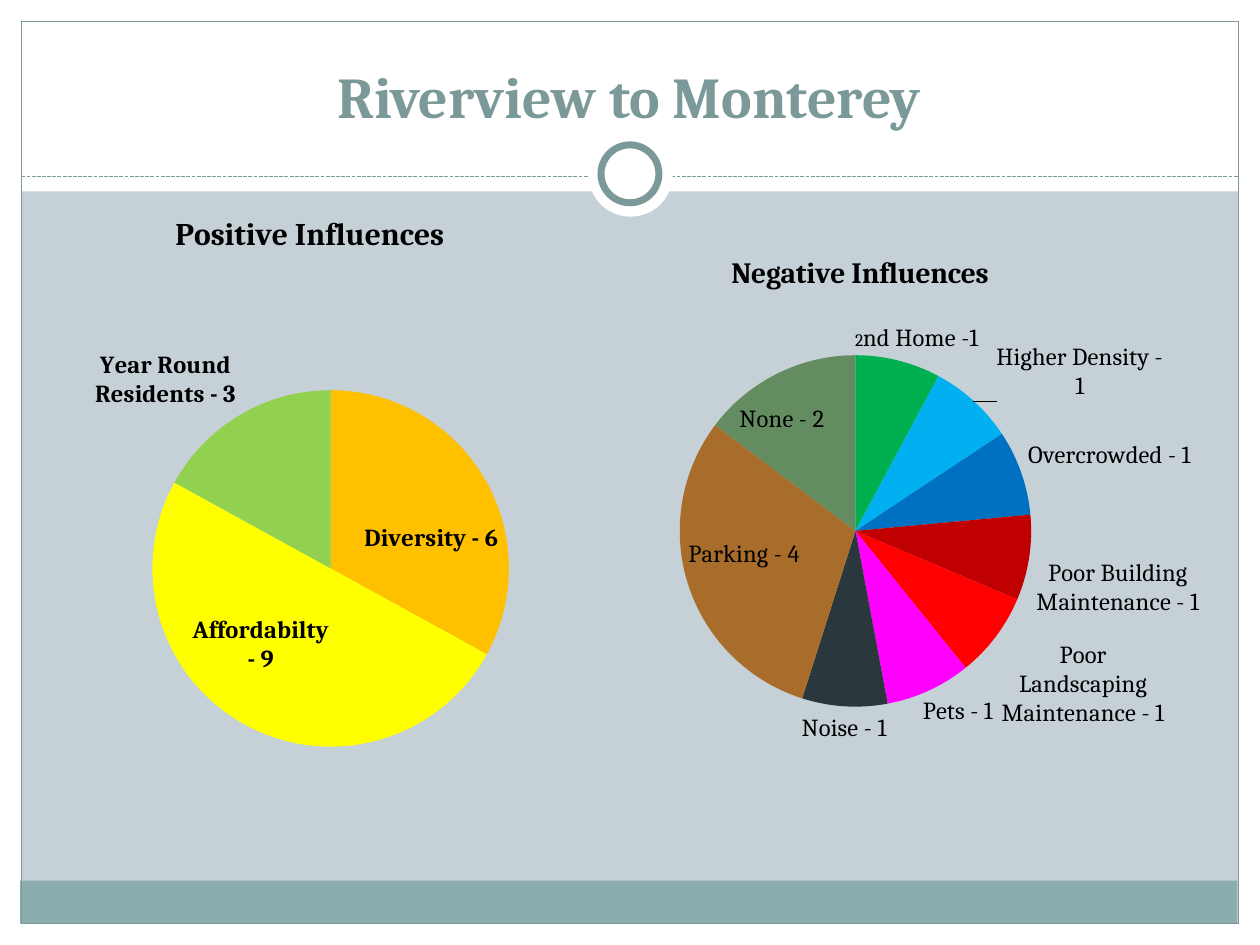
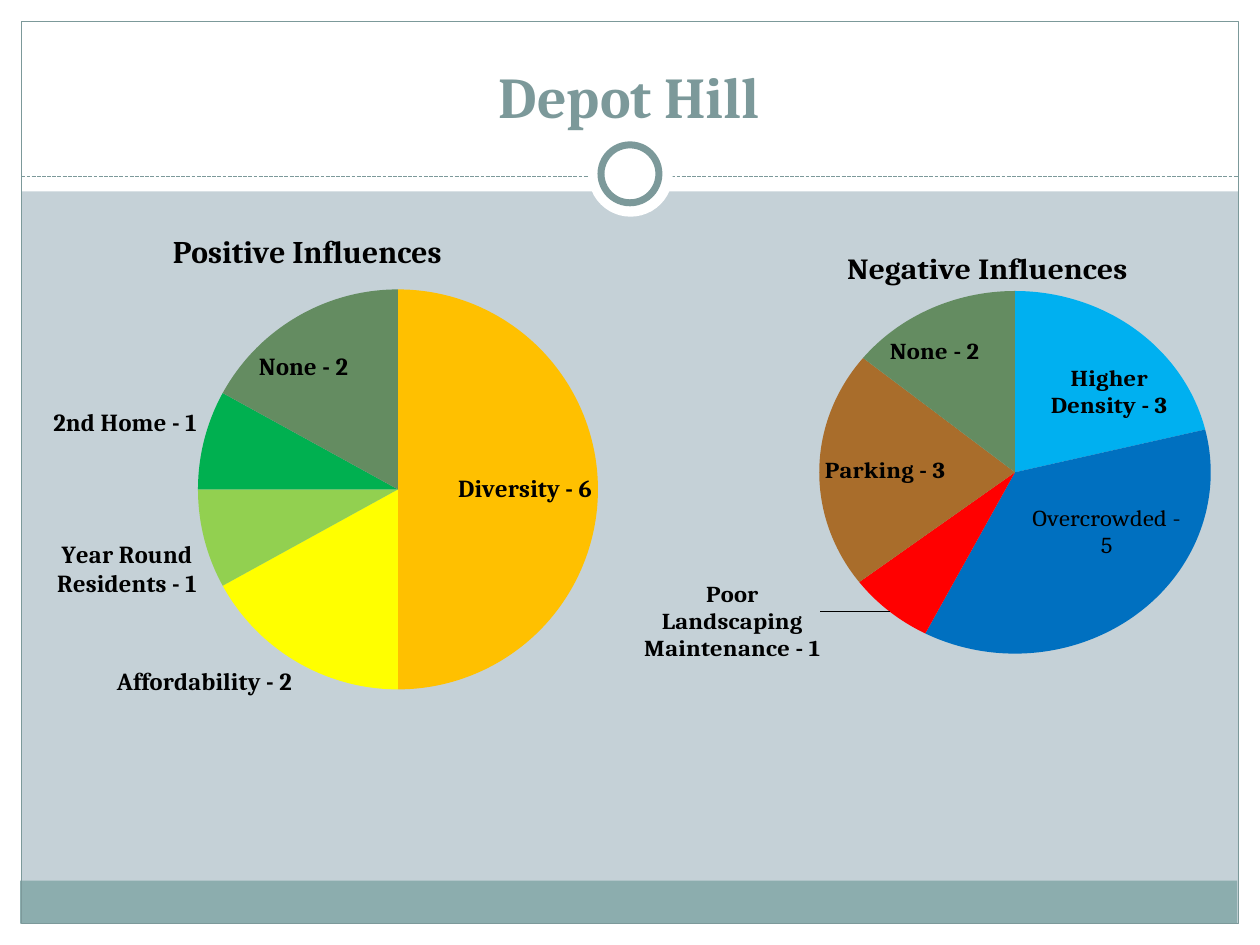
from lxml import etree
from pptx import Presentation
from pptx.chart.data import CategoryChartData
from pptx.dml.color import RGBColor
from pptx.enum import chart as ch, dml, shapes, text
from pptx.oxml import parse_xml
from pptx.oxml.ns import nsdecls, qn
from pptx.util import Inches, Pt

FONT = "Cambria"
BACK, WHITE, BLACK, ACCENT, FOOT = "C5D1D7", "FFFFFF", "000000", "7C999A", "8CADAE"
DIVERSE, AFFORD, RESIDENT, HOME, NONE = "FFC000", "FFFF00", "92D050", "00B050", "648C61"
DENSITY, CROWD, BUILDING, LANDSCAPE = "00B0F0", "0070C0", "C00000", "FF0000"
PETS, NOISE, PARKING = "FF00FF", "2A373D", "A96D2B"

# Content: each slice is (label, value, colour).
# "plot" and "title_at" are fractions of the chart; "moved" shifts one label;
# "custom" gives one label as runs of (text, size)
SLIDES = [
    ("Riverview to Monterey", [
        dict(title="Positive Influences", title_size=18, at=(-0.83, 1.5, 6.58, 4.67),
             plot=(0.31, 0.29, 0.43, 0.71), bold=True,
             slices=[("Diversity - 6", 33, DIVERSE),
                     ("Affordabilty - 9", 50, AFFORD),
                     ("Year Round Residents - 3", 17, RESIDENT)]),
        dict(title="Negative Influences", title_size=16.8, at=(3.33, 1.83, 6.99, 4.5),
             plot=(0.295, 0.22, 0.4, 0.62), bold=False,
             custom=(0, [("2", 10), ("nd Home -1", 14)]), moved=(1, 0.02, 0.01),
             slices=[("2nd Home 1", 8, HOME),
                     ("Higher Density - 1", 8, DENSITY),
                     ("Overcrowded - 1", 8, CROWD),
                     ("Poor Building Maintenance - 1", 8, BUILDING),
                     ("Poor Landscaping Maintenance - 1", 8, LANDSCAPE),
                     ("Pets - 1", 8, PETS),
                     ("Noise - 1", 8, NOISE),
                     ("Parking - 4", 31, PARKING),
                     ("None - 2", 15, NONE)]),
    ]),
    ("Depot Hill", [
        dict(title="Positive Influences", title_size=18, at=(-1.17, 1.67, 7.8, 3.92),
             plot=(0.35, 0.16, 0.41, 0.81), title_at=(0.32, 0.03), bold=True,
             slices=[("Diversity - 6", 50, DIVERSE),
                     ("Affordability - 2", 17, AFFORD),
                     ("Year Round Residents - 1", 8, RESIDENT),
                     ("2nd Home - 1", 8, HOME),
                     ("None - 2", 17, NONE)]),
        dict(title="Negative Influences", title_size=18, at=(4.25, 1.83, 7.25, 3.7),
             plot=(0.31, 0.14, 0.43, 0.84), title_at=(0.335, 0.03), bold=True,
             custom=(1, [("Overcrowded - 5", 14)]), moved=(2, -0.07, -0.05),
             slices=[("Higher Density - 3", 21, DENSITY),
                     ("Overcrowded - 5", 36, CROWD),
                     ("Poor Landscaping Maintenance - 1", 7, LANDSCAPE),
                     ("Parking - 3", 21, PARKING),
                     ("None - 2", 14, NONE)]),
    ]),
]

# Frame parts: preset, place, fill, line width
RECT, OVAL = shapes.MSO_SHAPE.RECTANGLE, shapes.MSO_SHAPE.OVAL
BANDS = [
    (RECT, (0, 7.33, 10, 0.17), WHITE, 0),
    (RECT, (0, 0, 10, 1.52), WHITE, 0),
    (RECT, (0, 0, 0.17, 7.5), WHITE, 0),
    (RECT, (9.83, 0, 0.17, 7.5), WHITE, 0),
    (RECT, (0.16, 6.99, 9.66, 0.34), FOOT, 0),
    (RECT, (0.17, 0.17, 9.66, 7.16), None, 0.75),
]
RING = [
    (OVAL, (4.67, 1.05, 0.67, 0.67), WHITE, 0),
    (OVAL, (4.77, 1.15, 0.46, 0.46), WHITE, 4),
]


def rgb(value):
    return RGBColor.from_string(value)


def set_font(font, size, bold, colour=BLACK):
    font.name, font.size, font.bold = FONT, Pt(size), bold
    font.color.rgb = rgb(colour)


def add_part(s, preset, at, fill, line):
    sp = s.shapes.add_shape(preset, *map(Inches, at))
    sp.shadow.inherit = False
    if fill:
        sp.fill.solid()
        sp.fill.fore_color.rgb = rgb(fill)
    else:
        sp.fill.background()
    if line:
        sp.line.color.rgb = rgb(ACCENT)
        sp.line.width = Pt(line)
    else:
        sp.line.fill.background()


def add_frame(s, title):
    """Background, bands, dashed rule, ring and title."""
    s.background.fill.solid()
    s.background.fill.fore_color.rgb = rgb(BACK)
    for part in BANDS:
        add_part(s, *part)
    rule = s.shapes.add_connector(shapes.MSO_CONNECTOR.STRAIGHT, Inches(0.17),
                                  Inches(1.4), Inches(9.83), Inches(1.4))
    rule.line.color.rgb = rgb(ACCENT)
    rule.line.width = Pt(0.75)
    rule.line.dash_style = dml.MSO_LINE.SQUARE_DOT
    etree.SubElement(rule._element.spPr, qn("a:effectLst"))
    for part in RING:
        add_part(s, *part)

    tf = s.shapes.add_textbox(*map(Inches, (0.33, 0.25, 9.33, 0.83))).text_frame
    tf.word_wrap = True
    tf.vertical_anchor = text.MSO_ANCHOR.BOTTOM
    p = tf.paragraphs[0]
    p.text = title
    p.alignment = text.PP_ALIGN.CENTER
    set_font(p.runs[0].font, 33, True, ACCENT)


def set_layout(parent, index, place, mode=None, inner=False):
    """Place a chart part by fractions of the chart."""
    for old in parent.findall(qn("c:layout")):
        parent.remove(old)
    parts = '<c:layoutTarget val="inner"/>' if inner else ""
    if mode:
        parts += f'<c:xMode val="{mode}"/><c:yMode val="{mode}"/>'
    parts += "".join(f'<c:{k} val="{v}"/>' for k, v in zip("xywh", place))
    parent.insert(index, parse_xml(
        f'<c:layout {nsdecls("c")}><c:manualLayout>{parts}</c:manualLayout></c:layout>'))


def add_pie(s, pie):
    names, values, colours = zip(*pie["slices"])
    data = CategoryChartData()
    data.categories = names
    data.add_series("Series 1", values)
    chart = s.shapes.add_chart(ch.XL_CHART_TYPE.PIE, *map(Inches, pie["at"]), data).chart
    chart.has_legend = False
    set_font(chart.font, 14, pie["bold"])

    # Title and plot area
    chart.has_title = True
    tf = chart.chart_title.text_frame
    tf.text = pie["title"]
    set_font(tf.paragraphs[0].runs[0].font, pie["title_size"], True)
    chart.chart_title.include_in_layout = False
    if "title_at" in pie:
        set_layout(chart.chart_title._element, 1, pie["title_at"], "edge")
    plot_area = chart._chartSpace.find(".//" + qn("c:plotArea"))
    set_layout(plot_area, 0, pie["plot"], "edge", inner=True)

    # Slices and labels
    series = chart.plots[0].series[0]
    for i, colour in enumerate(colours):
        fill = series.points[i].format.fill
        fill.solid()
        fill.fore_color.rgb = rgb(colour)
    labels = series.data_labels
    labels.show_value, labels.show_category_name = False, True
    labels.position = ch.XL_LABEL_POSITION.BEST_FIT
    set_font(labels.font, 14, pie["bold"])

    if "custom" in pie:
        i, runs = pie["custom"]
        label = series.points[i].data_label
        p = label.text_frame.paragraphs[0]
        for words, size in runs:
            r = p.add_run()
            r.text = words
            set_font(r.font, size, False)
        label.position = ch.XL_LABEL_POSITION.BEST_FIT
    if "moved" in pie:
        i, *shift = pie["moved"]
        label = series.points[i].data_label
        set_font(label.font, 14, pie["bold"])
        label.position = ch.XL_LABEL_POSITION.BEST_FIT
        for d in labels._element.findall(qn("c:dLbl")):
            if d.find(qn("c:idx")).get("val") == str(i):
                set_layout(d, 1, shift)
                d.find(qn("c:showVal")).set("val", "0")
                d.find(qn("c:showCatName")).set("val", "1")


def main():
    prs = Presentation()
    prs.slide_width, prs.slide_height = Inches(10), Inches(7.5)
    for title, pies in SLIDES:
        s = prs.slides.add_slide(prs.slide_layouts[6])
        add_frame(s, title)
        for pie in pies:
            add_pie(s, pie)
    prs.save("out.pptx")


if __name__ == "__main__":
    main()
